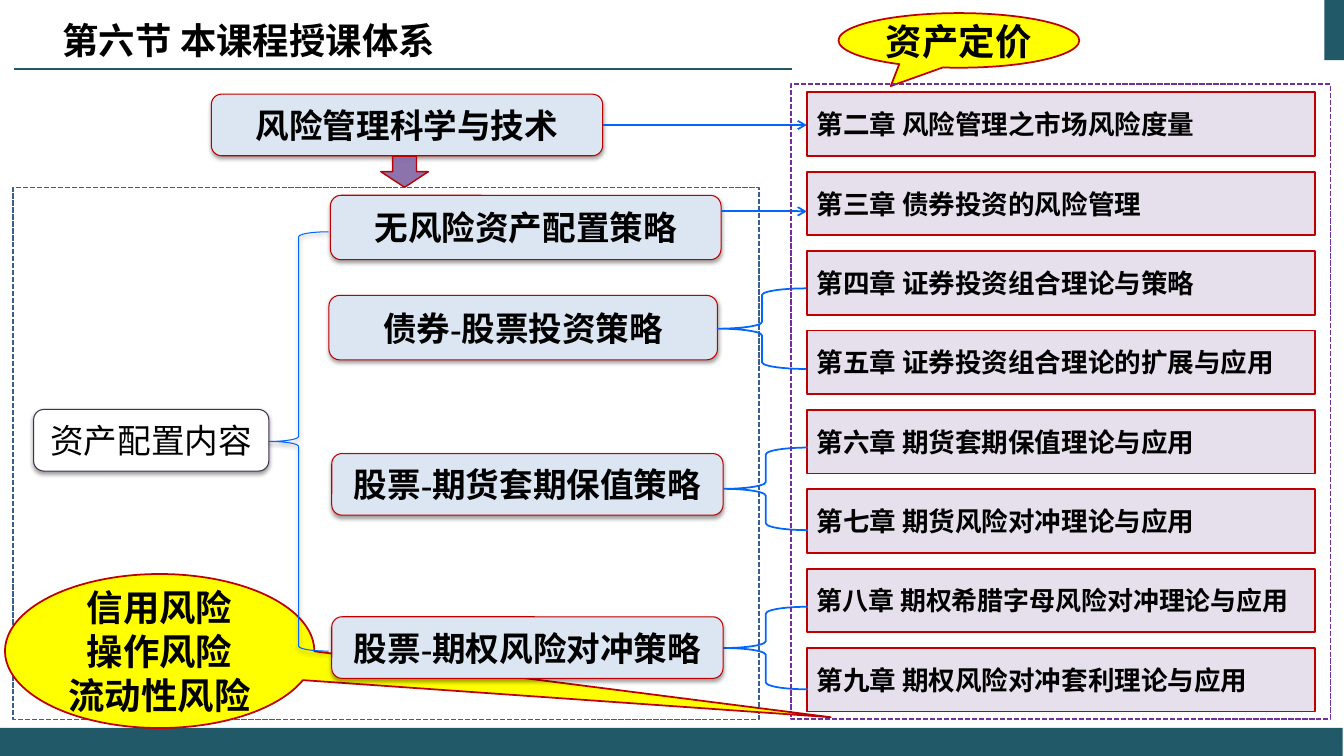
from pptx import Presentation
from pptx.dml.color import RGBColor
from pptx.enum.dml import MSO_LINE
from pptx.enum.shapes import MSO_CONNECTOR, MSO_SHAPE
from pptx.enum.text import MSO_ANCHOR, PP_ALIGN
from pptx.oxml import parse_xml
from pptx.oxml.ns import nsdecls, qn
from pptx.util import Pt
from lxml.etree import SubElement

COLORS = {
    "teal": "215968", "navy": "3A5F8C", "plum": "403152", "red": "C00000",
    "blue": "0066FF", "violet": "7030A0", "purple": "8064A2", "pale blue": "DCE6F2",
    "lilac": "E6E0EC", "yellow": "FFFF00", "white": "FFFFFF", "black": "000000",
}
HEADING_FONT = "Noto Sans CJK SC"
SHADOW = (
    f'<a:effectLst {nsdecls("a")}><a:outerShdw blurRad="39370" dist="20320" dir="5400000" '
    'rotWithShape="0"><a:srgbClr val="000000"><a:alpha val="38000"/></a:srgbClr>'
    "</a:outerShdw></a:effectLst>"
)


class SlideBuilder:
    def __init__(self, presentation):
        self.slide = presentation.slides.add_slide(presentation.slide_layouts[5])
        self.shapes = self.slide.shapes

    def color(self, name):
        return RGBColor.from_string(COLORS[name])

    def set_text(self, frame, lines, size, font, bold=True, align=PP_ALIGN.CENTER,
                 anchor=MSO_ANCHOR.MIDDLE):
        frame.word_wrap = align == PP_ALIGN.LEFT
        frame.vertical_anchor = anchor
        frame.text = "\n".join(lines)
        for paragraph in frame.paragraphs:
            paragraph.alignment = align
            paragraph.font.size = Pt(size)
            paragraph.font.name = font
            paragraph.font.bold = bold
            paragraph.font.color.rgb = self.color("black")

    def title(self, text, left, top, width, height):
        title = self.shapes.title
        title.left, title.top, title.width, title.height = map(Pt, (left, top, width, height))
        self.set_text(title.text_frame, [text], 26, HEADING_FONT, align=PP_ALIGN.LEFT,
                      anchor=MSO_ANCHOR.TOP)

    def shape(self, kind, box, fill=None, line=None, weight=1.25, dashed=False, shadow=False):
        shape = self.shapes.add_shape(kind, *map(Pt, box))
        if fill:
            shape.fill.solid()
            shape.fill.fore_color.rgb = self.color(fill)
        else:
            shape.fill.background()
        if line:
            shape.line.color.rgb = self.color(line)
            shape.line.width = Pt(weight)
            if dashed:
                shape.line.dash_style = MSO_LINE.SQUARE_DOT
        else:
            shape.line.fill.background()
        if shadow:
            shape._element.spPr.append(parse_xml(SHADOW))
        else:
            shape.shadow.inherit = False
        return shape

    def topic(self, text, box, fill="pale blue", line="red", font="Times New Roman", bold=True):
        shape = self.shape(MSO_SHAPE.ROUNDED_RECTANGLE, box, fill, line, 0.75, shadow=True)
        self.set_text(shape.text_frame, [text], 24, font, bold)

    def chapter(self, text, box, size):
        shape = self.shape(MSO_SHAPE.RECTANGLE, box, "lilac", "red")
        self.set_text(shape.text_frame, [text], size, "Calibri", align=PP_ALIGN.LEFT)

    def callout(self, lines, box, tip):
        shape = self.shape(MSO_SHAPE.OVAL_CALLOUT, box, "yellow", "red")
        shape.adjustments[0], shape.adjustments[1] = tip
        self.set_text(shape.text_frame, lines, 26, HEADING_FONT)

    def down_arrow(self, box):
        shape = self.shape(MSO_SHAPE.DOWN_ARROW, box, "purple", "red", 1)
        fill_color = shape._element.spPr.find(qn("a:solidFill"))[0]
        SubElement(fill_color, qn("a:alpha")).set("val", "90000")

    def line(self, start, end, y, color, weight, arrow=False):
        connector = self.shapes.add_connector(
            MSO_CONNECTOR.STRAIGHT, Pt(start), Pt(y), Pt(end), Pt(y))
        connector.line.color.rgb = self.color(color)
        connector.line.width = Pt(weight)
        if arrow:
            outline = connector._element.spPr.find(qn("a:ln"))
            SubElement(outline, qn("a:tailEnd")).set("type", "arrow")
        SubElement(connector._element.spPr, qn("a:effectLst"))


def main():
    presentation = Presentation()
    presentation.slide_width, presentation.slide_height = Pt(960), Pt(540)
    builder = SlideBuilder(presentation)

    builder.shape(MSO_SHAPE.RECTANGLE, (946, 0, 14, 43), "teal")
    builder.line(566, 10, 49, "teal", 1.5)
    builder.shape(MSO_SHAPE.RECTANGLE, (0, 520, 959, 20), "teal")
    builder.title("第六节 本课程授课体系", 37.5, 9.5, 499, 39)

    builder.shape(MSO_SHAPE.RECTANGLE, (9.4, 134, 533, 380), line="navy", dashed=True)
    builder.topic("资产配置内容", (24, 292.5, 168, 44), "white", "plum", bold=False)
    builder.topic("风险管理科学与技术", (151, 67.3, 279.5, 44), font="Calibri")
    builder.topic("无风险资产配置策略", (236, 139.5, 279, 46))
    builder.topic("债券-股票投资策略", (235, 211, 277.5, 46))
    builder.topic("股票-期货套期保值策略", (237, 324, 279.5, 44))
    builder.down_arrow((272, 111.5, 34, 22.3))

    chapters = [
        "第二章 风险管理之市场风险度量",
        "第三章 债券投资的风险管理",
        "第四章 证券投资组合理论与策略",
        "第五章 证券投资组合理论的扩展与应用",
        "第六章 期货套期保值理论与应用",
        "第七章 期货风险对冲理论与应用",
        "第八章 期权希腊字母风险对冲理论与应用",
        "第九章 期权风险对冲套利理论与应用",
    ]
    for index, chapter in enumerate(chapters):
        size = 18.5 if len(chapter) > 18 else 19
        builder.chapter(chapter, (576.3, 66 + 56.7 * index, 363, 45.4), size)

    for start, y in ((430.5, 89.3), (515, 151)):
        builder.line(start, 576.3, y, "blue", 1.25, arrow=True)
    for box in ((512.6, 206, 63.4, 57.6), (517, 319.7, 60, 59), (517, 433.4, 60, 59)):
        builder.shape(MSO_SHAPE.LEFT_BRACE, box, line="blue")

    builder.callout(["资产定价"], (599, 9.4, 172, 39), (-0.283, 0.836))
    builder.shape(MSO_SHAPE.RECTANGLE, (565, 60.3, 385.5, 453.5), line="violet", dashed=True)
    builder.callout(["信用风险", "操作风险", "流动性风险"], (3.6, 410, 221, 110), (2.169, 0.43))
    builder.topic("股票-期权风险对冲策略", (237, 440.6, 279.5, 44))
    builder.shape(MSO_SHAPE.LEFT_BRACE, (192, 165.6, 42.7, 299.5), line="blue", weight=0.75,
                  shadow=True)

    presentation.save("out.pptx")


if __name__ == "__main__":
    main()
